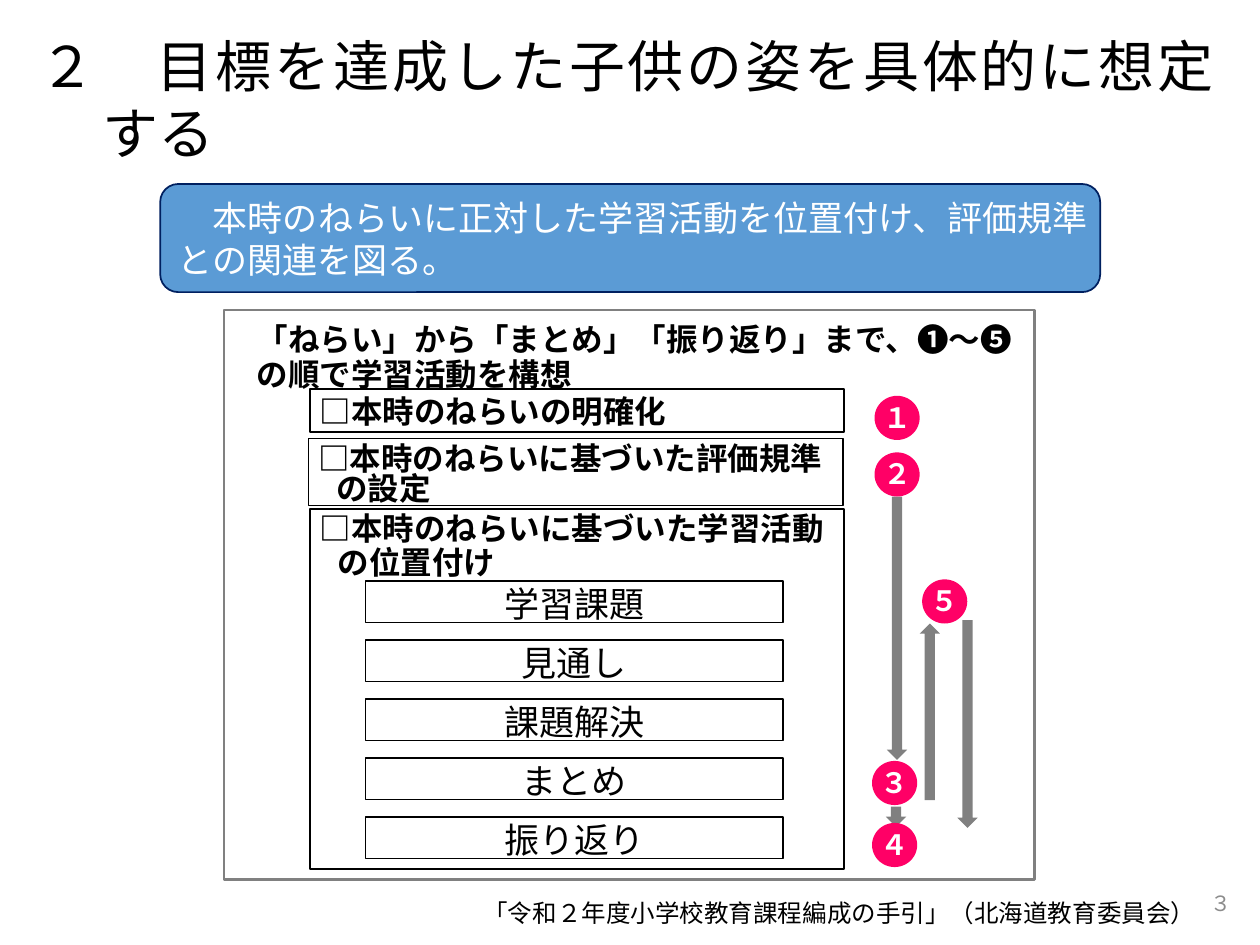
from lxml.etree import SubElement
from pptx import Presentation
from pptx.dml.color import RGBColor
from pptx.enum.shapes import MSO_SHAPE
from pptx.enum.text import MSO_ANCHOR, PP_ALIGN
from pptx.oxml.ns import qn
from pptx.util import Cm, Pt

COLORS = {
    "black": "000000",
    "white": "FFFFFF",
    "gray": "808080",
    "page_number": "8C8C8C",
    "pink": "FF0066",
    "blue": "5B9BD5",
    "navy": "002060",
}
JAPANESE = "Noto Sans CJK JP"
LATIN = "Calibri"
TEXT_MARGINS = (0.25, 0.13, 0.25, 0.13)
PANEL_MARGINS = (0.2, 0.1, 0.2, 0.1)
HANGING = (0.36, -0.36)


def color(name):
    return RGBColor.from_string(COLORS[name])


def write(box, text, size, font=LATIN, ink="black", bold=False, align=PP_ALIGN.LEFT,
          anchor=MSO_ANCHOR.TOP, margins=TEXT_MARGINS, spacing=None, indent=None):
    frame = box.text_frame
    frame.word_wrap = True
    frame.vertical_anchor = anchor
    (frame.margin_left, frame.margin_top,
     frame.margin_right, frame.margin_bottom) = [Cm(margin) for margin in margins]
    para = frame.paragraphs[0]
    para.text = text
    para.alignment = align
    if spacing:
        para.line_spacing = Pt(spacing)
    if indent:
        properties = para._p.get_or_add_pPr()
        properties.set("marL", str(Cm(indent[0])))
        properties.set("indent", str(Cm(indent[1])))
    para.font.name = font
    para.font.size = Pt(size)
    para.font.bold = bold
    para.font.color.rgb = color(ink)
    SubElement(para.font._element, qn("a:ea"), typeface=JAPANESE)


def add_text(page, place, text, size, **style):
    box = page.shapes.add_textbox(*[Cm(length) for length in place])
    write(box, text, size, **style)


def add_box(page, kind, place, fill=None, line=None, weight=1):
    box = page.shapes.add_shape(kind, *[Cm(length) for length in place])
    box.shadow.inherit = False
    if fill:
        box.fill.solid()
        box.fill.fore_color.rgb = color(fill)
    else:
        box.fill.background()
    if line:
        box.line.color.rgb = color(line)
        box.line.width = Pt(weight)
    else:
        box.line.fill.background()
    return box


def add_panel(page, place, text, spacing, size=18, bold=True, **style):
    box = add_box(page, MSO_SHAPE.RECTANGLE, place, line="black")
    write(box, text, size, bold=bold, spacing=spacing, indent=HANGING, **style)


def add_badge(page, left, top, number):
    badge = add_box(page, MSO_SHAPE.OVAL, (left, top, 0.91, 0.89), fill="pink")
    write(badge, number, 16, ink="white", bold=True, align=PP_ALIGN.CENTER,
          anchor=MSO_ANCHOR.MIDDLE, margins=(0, 0, 0, 0), spacing=18)


def add_heading(page):
    add_text(page, (0.51, 0.51, 24.23, 3.18), "２　目標を達成した子供の姿を具体的に想定する",
             32, font=JAPANESE, align=PP_ALIGN.JUSTIFY, indent=(1.3, -1.27))
    callout = add_box(page, MSO_SHAPE.ROUNDED_RECTANGLE, (3.23, 3.71, 18.95, 2.18),
                      fill="blue", line="navy")
    write(callout, "　本時のねらいに正対した学習活動を位置付け、評価規準との関連を図る。", 20,
          font=JAPANESE, ink="white", anchor=MSO_ANCHOR.MIDDLE, margins=(0.25, 0.13, 0, 0.13))


def add_lesson_plan(page):
    add_box(page, MSO_SHAPE.RECTANGLE, (4.52, 6.25, 16.33, 11.48), line="gray", weight=1.5)
    add_text(page, (4.93, 6.38, 16.31, 1.35),
             "「ねらい」から「まとめ」「振り返り」まで、➊～❺の順で学習活動を構想",
             18, bold=True, spacing=20)
    add_panel(page, (6.25, 7.85, 10.77, 0.86), "□本時のねらいの明確化", 22,
              anchor=MSO_ANCHOR.MIDDLE, margins=(0.2, 0, 0.2, 0))
    add_panel(page, (6.22, 8.84, 10.77, 1.35), "□本時のねらいに基づいた評価規準の設定", 17,
              anchor=MSO_ANCHOR.MIDDLE, margins=(0.2, 0.2, 0.2, 0))
    add_panel(page, (6.25, 10.26, 10.77, 7.26), "□本時のねらいに基づいた学習活動の位置付け", 19,
              margins=PANEL_MARGINS)
    steps = ["学習課題", "見通し", "課題解決", "まとめ", "振り返り"]
    for index, step in enumerate(steps):
        add_panel(page, (7.37, 11.71 + 1.19 * index, 8.41, 0.84), step, 22, size=20,
                  bold=False, align=PP_ALIGN.CENTER, margins=PANEL_MARGINS)


def add_order(page):
    arrows = [
        (MSO_SHAPE.DOWN_ARROW, 17.88, 10.01, 5.31),
        (MSO_SHAPE.DOWN_ARROW, 17.86, 16.26, 0.41),
        (MSO_SHAPE.UP_ARROW, 18.54, 12.57, 3.56),
        (MSO_SHAPE.DOWN_ARROW, 19.3, 12.5, 4.19),
    ]
    for kind, left, top, length in arrows:
        add_box(page, kind, (left, top, 0.41, length), fill="gray")
    badges = [(17.63, 7.98, "１"), (17.63, 9.12, "２"), (17.58, 15.34, "３"),
              (17.58, 16.59, "４"), (18.59, 11.68, "５")]
    for left, top, number in badges:
        add_badge(page, left, top, number)


def add_footer(page):
    style = {"font": JAPANESE, "align": PP_ALIGN.RIGHT, "anchor": MSO_ANCHOR.MIDDLE}
    add_text(page, (-0.15, 17.91, 24.51, 0.99),
             "「令和２年度小学校教育課程編成の手引」（北海道教育委員会）", 14, **style)
    add_text(page, (19.35, 17.7, 5.72, 1.02), "３", 12, ink="page_number", **style)


def main():
    deck = Presentation()
    deck.slide_width, deck.slide_height = Cm(25.4), Cm(19.05)
    page = deck.slides.add_slide(deck.slide_layouts[6])
    add_lesson_plan(page)
    add_order(page)
    add_heading(page)
    add_footer(page)
    deck.save("out.pptx")


if __name__ == "__main__":
    main()
